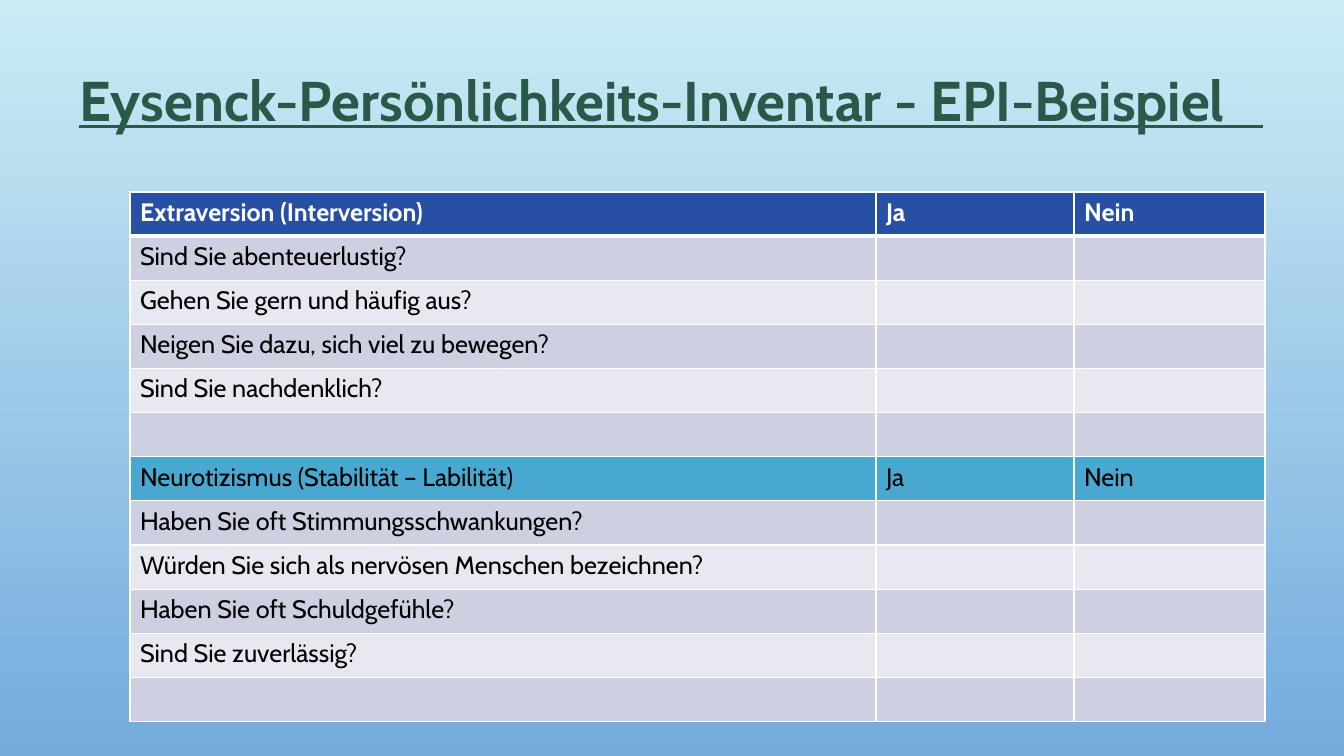
from lxml import etree
from pptx import Presentation
from pptx.dml.color import RGBColor
from pptx.enum.text import MSO_ANCHOR, MSO_AUTO_SIZE, PP_ALIGN
from pptx.oxml.ns import qn
from pptx.util import Pt

SLIDE_W, SLIDE_H = 1344, 756
EMU_PER_PX = 12192000 / SLIDE_W
CENTER, LEFT = PP_ALIGN.CENTER, PP_ALIGN.LEFT
TOP = MSO_ANCHOR.TOP
NO_AUTOFIT = MSO_AUTO_SIZE.NONE

SKY = ("CBECF5", "73ABDD")
GREEN, WHITE, BLACK = "295948", "FFFFFF", "000000"
HEADER, SECTION = "274FA4", "48A8D0"
BANDS = ("CDD0E0", "E8E9F0")

ANSWERS = ("Ja", "Nein")
EXTRAVERSION = ("Extraversion (Interversion)", [
    "Sind Sie abenteuerlustig?",
    "Gehen Sie gern und häufig aus?",
    "Neigen Sie dazu, sich viel zu bewegen?",
    "Sind Sie nachdenklich?",
    "",
])
NEUROTICISM = ("Neurotizismus (Stabilität – Labilität)", [
    "Haben Sie oft Stimmungsschwankungen?",
    "Würden Sie sich als nervösen Menschen bezeichnen?",
    "Haben Sie oft Schuldgefühle?",
    "Sind Sie zuverlässig?",
    "",
])


def px(n):
    return round(n * EMU_PER_PX)


def rgb(value):
    return RGBColor.from_string(value)


class SlideBuilder:
    font_name = "Cabin"

    def __init__(self, prs):
        self.slide = prs.slides.add_slide(prs.slide_layouts[5])

    def background(self, top, bottom):
        fill = self.slide.background.fill
        fill.gradient()
        fill.gradient_angle = 270
        for stop, position, color in zip(fill.gradient_stops, (0, 1), (top, bottom)):
            stop.position = position
            stop.color.rgb = rgb(color)

    def set_text(self, p, text, color, align=LEFT, **font):
        p.alignment = align
        p.line_spacing = 1.0
        target = p.font
        if text:
            r = p.add_run()
            r.text = text
            target = r.font
        for name, value in {"name": self.font_name, **font}.items():
            setattr(target, name, value)
        target.color.rgb = rgb(color)

    def title(self, text, x, y, w, h):
        sp = self.slide.shapes.title
        sp.left, sp.top, sp.width, sp.height = map(px, (x, y, w, h))
        tf = sp.text_frame
        tf.word_wrap = True
        tf.auto_size = NO_AUTOFIT
        tf.vertical_anchor = TOP
        self.set_text(tf.paragraphs[0], text, GREEN, CENTER,
                      size=Pt(40), bold=True, underline=True)

    def borders(self, cell, top, bottom):
        tc_pr = cell._tc.get_or_add_tcPr()
        for side, width in (("L", 1), ("R", 1), ("T", top), ("B", bottom)):
            ln = etree.SubElement(tc_pr, qn(f"a:ln{side}"), w=str(Pt(width)))
            fill = etree.SubElement(ln, qn("a:solidFill"))
            etree.SubElement(fill, qn("a:srgbClr"), val=WHITE)

    def table(self, rows, x, y, col_widths, h):
        """Each row holds its texts, fill, text colour and bold flag."""
        frame = self.slide.shapes.add_table(
            len(rows), len(col_widths), px(x), px(y), px(sum(col_widths)), px(h))
        table = frame.table
        table.horz_banding = False
        for column, width in zip(table.columns, col_widths):
            column.width = px(width)
        for i, (texts, fill, color, bold) in enumerate(rows):
            table.rows[i].height = px(h) // len(rows)
            for cell, text in zip(table.rows[i].cells, texts):
                self.borders(cell, 3 if i == 1 else 1, 3 if i == 0 else 1)
                cell.fill.solid()
                cell.fill.fore_color.rgb = rgb(fill)
                self.set_text(cell.text_frame.paragraphs[0], text, color,
                              size=Pt(18), bold=bold)


def scale_rows(scale, fill, color, bold):
    """One heading row, then its questions in alternating bands."""
    heading, questions = scale
    rows = [((heading, *ANSWERS), fill, color, bold)]
    for i, question in enumerate(questions):
        rows.append(((question, "", ""), BANDS[i % 2], BLACK, False))
    return rows


def main():
    prs = Presentation()
    prs.slide_width, prs.slide_height = px(SLIDE_W), px(SLIDE_H)
    s = SlideBuilder(prs)

    # Background and title
    s.background(*SKY)
    s.title("Eysenck-Persönlichkeits-Inventar - EPI-Beispiel   ", 47, 60, 1248, 156)

    # Questionnaire
    rows = (scale_rows(EXTRAVERSION, HEADER, WHITE, True)
            + scale_rows(NEUROTICISM, SECTION, BLACK, False))
    s.table(rows, 130, 192, (746, 198, 191), 530)

    prs.save("out.pptx")


if __name__ == "__main__":
    main()
